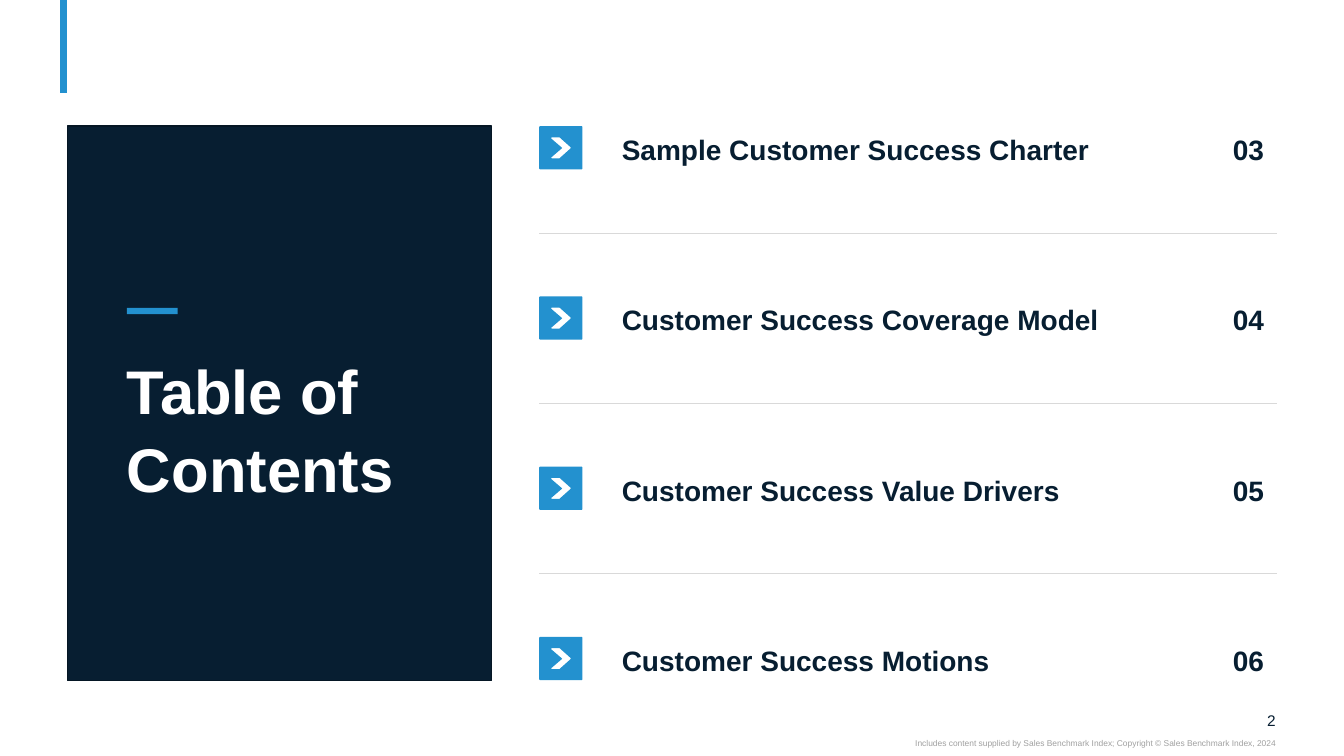
from lxml import etree
from pptx import Presentation
from pptx import util as u
from pptx.dml.color import RGBColor
from pptx.enum import shapes, text
from pptx.oxml import ns

NAVY = RGBColor(0x07, 0x1E, 0x31)
NAVY_EDGE = RGBColor(0x05, 0x16, 0x24)
BLUE = RGBColor(0x23, 0x91, 0xCF)
RULE = RGBColor(0xD9, 0xD9, 0xD9)
GRAY = RGBColor(0xA0, 0xA0, 0xA0)
WHITE = RGBColor(0xFF, 0xFF, 0xFF)

ENTRIES = [
    ("Sample Customer Success Charter", "03"),
    ("Customer Success Coverage Model", "04"),
    ("Customer Success Value Drivers", "05"),
    ("Customer Success Motions", "06"),
]
TOP = 3.18          # top of the panel and of the first entry, cm
STEP = 4.29         # distance between entries, cm
ICON_LEFT = 13.59
RIGHT = 32.18

# Icon outlines in hundredths of a centimetre
TILE = [(2, 0), (107, 0), (109, 2), (109, 107), (107, 109),
        (2, 109), (0, 107), (0, 2)]
CHEVRON = [(31, 28), (30, 31), (58, 55), (30, 79), (31, 81),
           (51, 81), (79, 56), (79, 53), (51, 28)]


def add_text(page, left, top, width, height, words, size, color,
             bold=False, align=text.PP_ALIGN.LEFT, anchor=text.MSO_ANCHOR.TOP):
    box = page.shapes.add_textbox(u.Cm(left), u.Cm(top), u.Cm(width), u.Cm(height))
    frame = box.text_frame
    frame.margin_left = frame.margin_right = 0
    frame.margin_top = frame.margin_bottom = 0
    frame.word_wrap = True
    frame.vertical_anchor = anchor
    frame.text = words
    para = frame.paragraphs[0]
    para.alignment = align
    para.line_spacing = 1.05
    font = para.runs[0].font
    font.name = "Arial"
    font.size = u.Pt(size)
    font.bold = bold
    font.color.rgb = color


def add_block(page, left, top, width, height, fill, edge=None):
    block = page.shapes.add_shape(shapes.MSO_SHAPE.RECTANGLE, u.Cm(left),
                                  u.Cm(top), u.Cm(width), u.Cm(height))
    block.shadow.inherit = False
    block.fill.solid()
    block.fill.fore_color.rgb = fill
    if edge is None:
        block.line.fill.background()
    else:
        block.line.color.rgb = edge
        block.line.width = u.Pt(1)


def add_line(page, x1, y1, x2, y2, color, width):
    line = page.shapes.add_connector(shapes.MSO_CONNECTOR.STRAIGHT,
                                     u.Cm(x1), u.Cm(y1), u.Cm(x2), u.Cm(y2))
    line.line.color.rgb = color
    line.line.width = u.Pt(width)
    etree.SubElement(line._element.spPr, ns.qn("a:effectLst"))


def add_icon(page, left, top):
    """Blue tile with a chevron cut out of it."""
    builder = page.shapes.build_freeform(*TILE[0], scale=u.Cm(0.01))
    builder.add_line_segments(TILE[1:], close=True)
    builder.move_to(*CHEVRON[0])
    builder.add_line_segments(CHEVRON[1:], close=True)
    icon = builder.convert_to_shape(u.Cm(left), u.Cm(top))
    icon.shadow.inherit = False
    icon.fill.solid()
    icon.fill.fore_color.rgb = BLUE
    icon.line.fill.background()


def add_entry(page, top, title, number):
    add_icon(page, ICON_LEFT, top)
    add_text(page, 15.67, top + 0.12, 12.27, 0.86, title, 20, NAVY, bold=True)
    add_text(page, 31.07, top + 0.12, 1.09, 0.86, number, 20, NAVY, bold=True)


def main():
    deck = Presentation()
    deck.slide_width, deck.slide_height = u.Cm(33.87), u.Cm(19.05)
    page = deck.slides.add_slide(deck.slide_layouts[6])

    # Page frame: accent line, page number, copyright
    right = text.PP_ALIGN.RIGHT
    add_line(page, 1.61, 0, 1.61, 2.35, BLUE, 5)
    add_text(page, 31.3, 17.91, 0.85, 0.48, "2", 11, NAVY,
             align=right, anchor=text.MSO_ANCHOR.MIDDLE)
    add_text(page, 19.05, 18.6, 13.1, 0.26,
             "Includes content supplied by Sales Benchmark Index; "
             "Copyright © Sales Benchmark Index, 2024", 6, GRAY, align=right)

    # Title panel
    add_block(page, 1.7, TOP, 10.69, 13.97, NAVY, NAVY_EDGE)
    add_text(page, 3.2, 8.81, 7.7, 3.76, "Table of Contents", 44, WHITE, bold=True)
    add_block(page, 3.2, 7.76, 1.28, 0.16, BLUE)

    # Entries with a rule between neighbours
    for index, (title, number) in enumerate(ENTRIES):
        top = TOP + index * STEP
        add_entry(page, top, title, number)
        if index < len(ENTRIES) - 1:
            add_line(page, RIGHT, top + 2.69, ICON_LEFT, top + 2.69, RULE, 0.5)

    deck.save("out.pptx")


if __name__ == "__main__":
    main()
